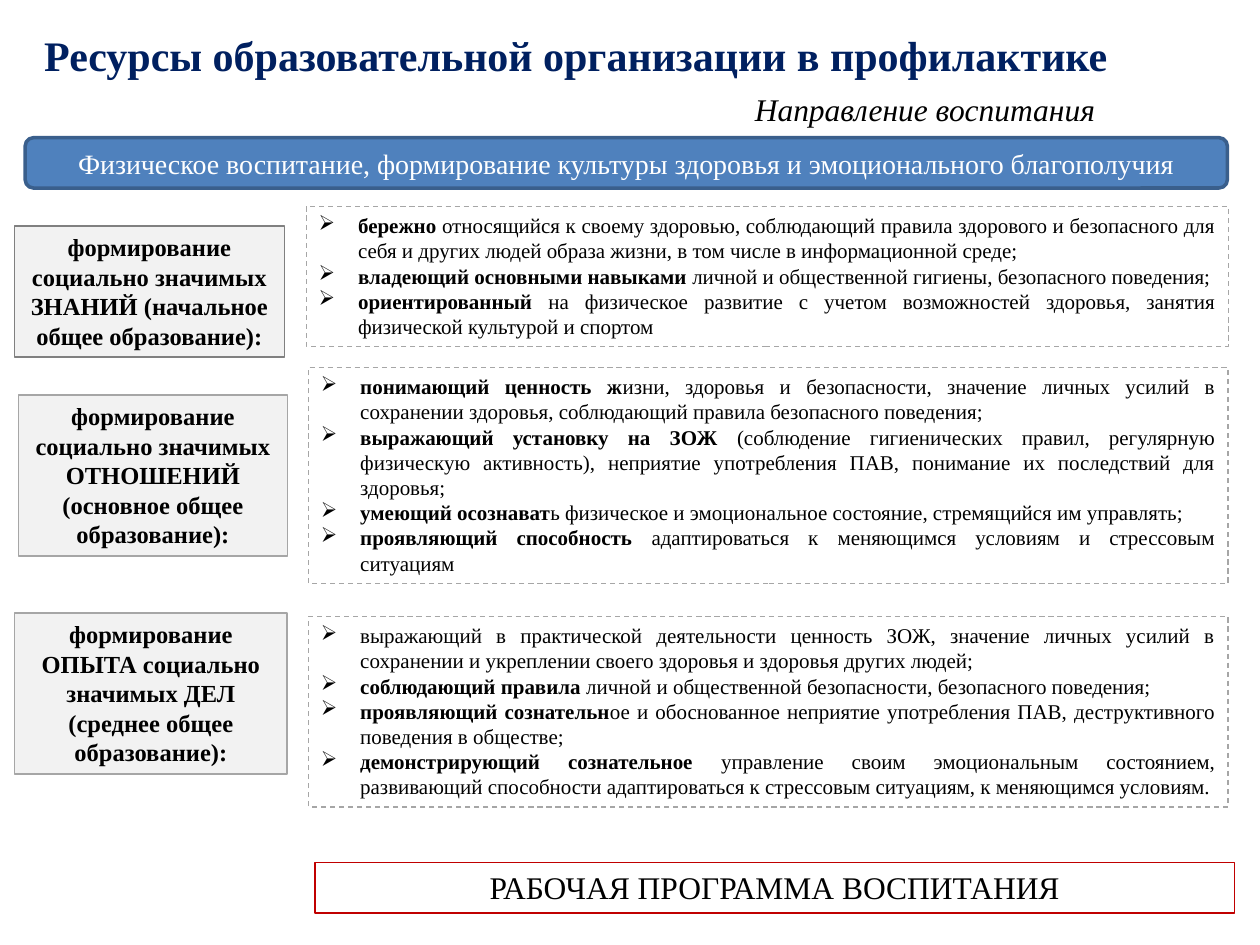
from lxml import etree
from pptx import Presentation
from pptx.dml.color import RGBColor
from pptx.enum import dml, shapes, text
from pptx.oxml.ns import qn
from pptx.util import Pt

THEME = {
    "font": "Times New Roman",
    "title": "002060", "ink": "000000", "white": "FFFFFF",
    "banner": "4F81BD", "banner_edge": "3A5F8C",
    "stage": "F2F2F2", "grey": "A6A6A6", "dark_grey": "808080", "red": "C00000",
    "title_size": 24, "heading_size": 18, "banner_size": 16,
    "stage_size": 14, "goal_size": 12,
}
HAIRLINE = 0.75
BULLET_INDENT = 22.5

TITLE = "Ресурсы образовательной организации в профилактике"
DIRECTION = "Направление воспитания"
BANNER = "Физическое воспитание, формирование культуры здоровья и эмоционального благополучия"
PROGRAMME = "РАБОЧАЯ ПРОГРАММА ВОСПИТАНИЯ"

# Each goal is a bold opening and its plain continuation.
STAGES = [
    {"name": "формирование социально значимых ЗНАНИЙ (начальное общее образование):",
     "name_box": (8.4, 129.2, 154, 74.8), "edge": "dark_grey",
     "goals_box": (175, 118, 527, 80),
     "goals": [
         ("бережно", " относящийся к своему здоровью, соблюдающий правила здорового и безопасного "
                     "для себя и других людей образа жизни, в том числе в информационной среде;"),
         ("владеющий основными навыками ", "личной и общественной гигиены, безопасного поведения;"),
         ("ориентированный", " на физическое развитие с учетом возможностей здоровья, "
                             "занятия физической культурой и спортом"),
     ]},
    {"name": "формирование социально значимых ОТНОШЕНИЙ (основное общее образование):",
     "name_box": (10.6, 225.8, 153.7, 92), "edge": "grey",
     "goals_box": (176.3, 210, 525.5, 123.6),
     "goals": [
         ("понимающий ценность ж", "изни, здоровья и безопасности, значение личных усилий в "
                                   "сохранении здоровья, соблюдающий правила безопасного поведения;"),
         ("выражающий установку на ЗОЖ ", "(соблюдение гигиенических правил, регулярную физическую "
                                          "активность), неприятие употребления ПАВ, понимание их "
                                          "последствий для здоровья;"),
         ("умеющий осознават", "ь физическое и эмоциональное состояние, стремящийся им управлять;"),
         ("проявляющий способность ", "адаптироваться к меняющимся условиям и стрессовым ситуациям"),
     ]},
    {"name": "формирование ОПЫТА социально значимых ДЕЛ (среднее общее образование):",
     "name_box": (8.4, 350.4, 155.7, 92), "edge": "grey",
     "goals_box": (176.3, 352.3, 525.5, 108.9),
     "goals": [
         ("", "выражающий в практической деятельности ценность ЗОЖ, значение личных усилий в "
              "сохранении и укреплении своего здоровья и здоровья других людей;"),
         ("соблюдающий правила ", "личной и общественной безопасности, безопасного поведения;"),
         ("проявляющий сознательн", "ое и обоснованное неприятие употребления ПАВ, "
                                    "деструктивного поведения в обществе;"),
         ("демонстрирующий сознательное ", "управление своим эмоциональным состоянием, развивающий "
                                           "способности адаптироваться к стрессовым ситуациям, "
                                           "к меняющимся условиям."),
     ]},
]


def color(name):
    return RGBColor.from_string(THEME[name])


def style(paragraph, size, ink="ink", align=text.PP_ALIGN.CENTER, bold=None, italic=None):
    paragraph.alignment = align
    font = paragraph.font
    font.name, font.size, font.color.rgb = THEME["font"], Pt(THEME[size]), color(ink)
    font.bold, font.italic = bold, italic


def prepare_frame(shape, anchor):
    frame = shape.text_frame
    frame.word_wrap = True
    frame.vertical_anchor = anchor
    return frame


def add_label(slide, box, wording, size, anchor=text.MSO_ANCHOR.TOP, **look):
    label = slide.shapes.add_textbox(*map(Pt, box))
    paragraph = prepare_frame(label, anchor).paragraphs[0]
    paragraph.text = wording
    style(paragraph, size, **look)


def add_panel(slide, box, edge, fill=None, width=HAIRLINE, dashed=False,
              preset=shapes.MSO_SHAPE.RECTANGLE, anchor=text.MSO_ANCHOR.TOP):
    """Draw an outlined shape and return its text frame."""
    panel = slide.shapes.add_shape(preset, *map(Pt, box))
    panel.shadow.inherit = False
    if fill:
        panel.fill.solid()
        panel.fill.fore_color.rgb = color(fill)
    else:
        panel.fill.background()
    panel.line.color.rgb = color(edge)
    panel.line.width = Pt(width)
    if dashed:
        panel.line.dash_style = dml.MSO_LINE.DASH
    return prepare_frame(panel, anchor)


def add_panel_text(frame, wording, size, **look):
    paragraph = frame.paragraphs[0]
    paragraph.text = wording
    style(paragraph, size, **look)


def add_bullet(paragraph):
    properties = paragraph._p.get_or_add_pPr()
    properties.set("marL", str(Pt(BULLET_INDENT)))
    properties.set("indent", str(-Pt(BULLET_INDENT)))
    etree.SubElement(properties, qn("a:buChar")).set("char", "➢")


def add_goals(frame, goals):
    for number, (opening, rest) in enumerate(goals):
        paragraph = frame.add_paragraph() if number else frame.paragraphs[0]
        add_bullet(paragraph)
        style(paragraph, "goal_size", align=text.PP_ALIGN.JUSTIFY)
        if opening:
            lead = paragraph.add_run()
            lead.text = opening
            lead.font.bold = True
        paragraph.add_run().text = rest


def main():
    deck = Presentation()
    deck.slide_width, deck.slide_height = Pt(720), Pt(540)
    slide = deck.slides.add_slide(deck.slide_layouts[6])

    add_label(slide, (14.4, 8, 629.3, 46), TITLE, "title_size",
              anchor=text.MSO_ANCHOR.MIDDLE, ink="title", bold=True)
    add_label(slide, (273, 47.8, 360, 29), DIRECTION, "heading_size",
              align=text.PP_ALIGN.RIGHT, italic=True)

    banner = add_panel(slide, (14.4, 78.7, 687, 28.8), "banner_edge", "banner", width=2,
                       preset=shapes.MSO_SHAPE.ROUNDED_RECTANGLE,
                       anchor=text.MSO_ANCHOR.MIDDLE)
    add_panel_text(banner, BANNER, "banner_size", ink="white")

    for stage in STAGES:
        name = add_panel(slide, stage["name_box"], stage["edge"], "stage")
        add_panel_text(name, stage["name"], "stage_size", bold=True)
        goals = add_panel(slide, stage["goals_box"], "grey", dashed=True)
        add_goals(goals, stage["goals"])

    programme = add_panel(slide, (180, 492.7, 525.5, 29), "red")
    add_panel_text(programme, PROGRAMME, "heading_size")

    deck.save("out.pptx")


if __name__ == "__main__":
    main()
